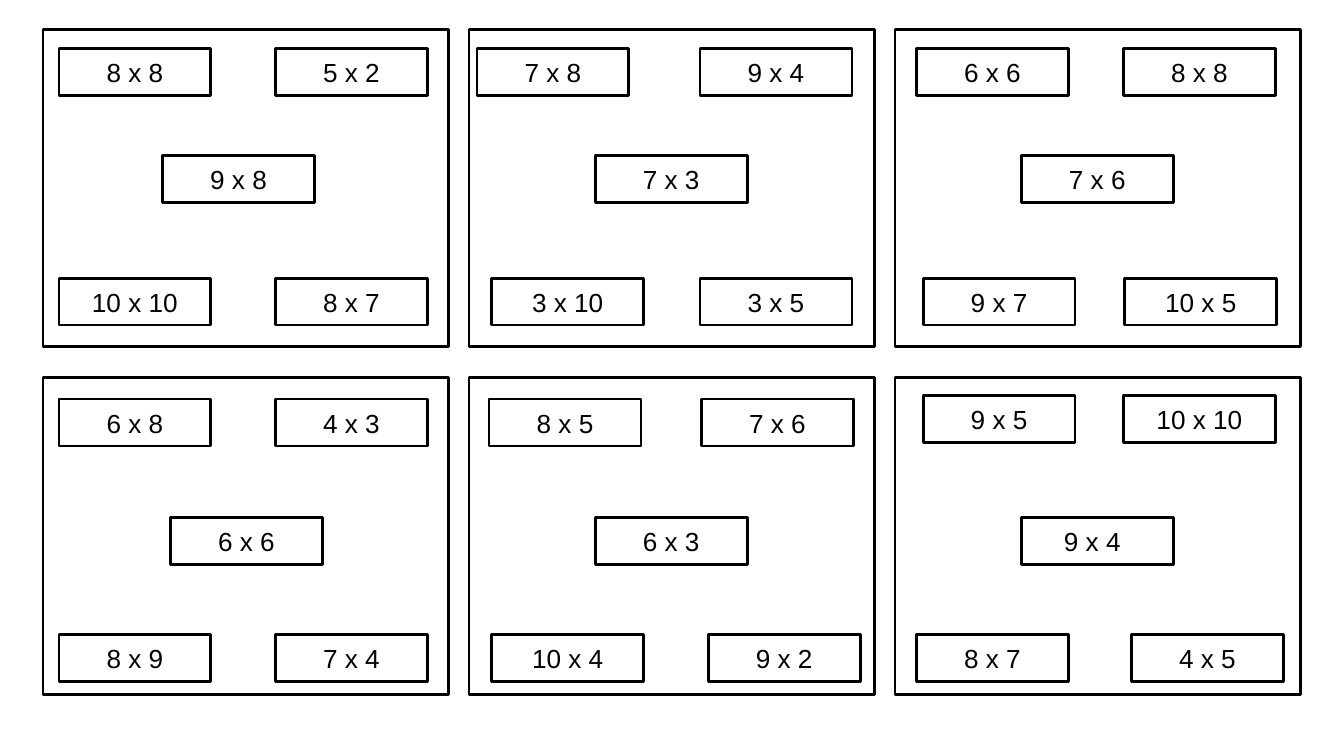
from pptx import Presentation
from pptx.dml.color import RGBColor
from pptx.enum.shapes import MSO_SHAPE
from pptx.enum.text import MSO_ANCHOR, PP_ALIGN
from pptx.util import Pt

BLACK = RGBColor(0, 0, 0)
WHITE = RGBColor(255, 255, 255)

# Cards by row: five (product, left offset in the card), in the order
# top left, top right, middle, bottom left, bottom right
CARDS = [
    [
        [("8 x 8", 8.6), ("5 x 2", 124.6), ("9 x 8", 64.1), ("10 x 10", 8.6), ("8 x 7", 124.6)],
        [("7 x 8", 4.3), ("9 x 4", 123.8), ("7 x 3", 67.7), ("3 x 10", 12.2), ("3 x 5", 123.8)],
        [("6 x 6", 11.5), ("8 x 8", 122.4), ("7 x 6", 67.7), ("9 x 7", 15.1), ("10 x 5", 123.1)],
    ],
    [
        [("6 x 8", 8.6), ("4 x 3", 124.6), ("6 x 6", 68.4), ("8 x 9", 8.6), ("7 x 4", 124.6)],
        [("8 x 5", 10.8), ("7 x 6", 124.6), ("6 x 3", 67.7), ("10 x 4", 12.2), ("9 x 2", 128.2)],
        [("9 x 5", 15.1), ("10 x 10", 122.4), ("9 x 4", 67.7), ("8 x 7", 11.5), ("4 x 5", 126.7)],
    ],
]
# Top offsets of the top, middle and bottom boxes, by card row
BOX_TOPS = [(10.1, 67.7, 133.2), (11.5, 74.9, 137.5)]
BOX_LEVELS = (0, 0, 1, 2, 2)
LAST_CARD = (1, 2)
LAST_CARD_TOP = 9.4      # its top boxes sit a little higher
LAST_CARD_INDENT = 22.8  # its middle box is left-aligned

CARD_LEFT, CARD_TOP = 23, 15.8
CARD_W, CARD_H = 217.4, 169.9
STEP_X, STEP_Y = 228.24, 186.5
BOX_W, BOX_H = 81.4, 25.2
INSET = 7.2

prs = Presentation()
prs.slide_width, prs.slide_height = Pt(720), Pt(405)
s = prs.slides.add_slide(prs.slide_layouts[6])


def add_rect(x, y, w, h):
    sp = s.shapes.add_shape(MSO_SHAPE.RECTANGLE, Pt(x), Pt(y), Pt(w), Pt(h))
    sp.shadow.inherit = False
    sp.fill.solid()
    sp.fill.fore_color.rgb = WHITE
    sp.line.color.rgb = BLACK
    sp.line.width = Pt(1.5)
    return sp


def add_product(text, x, y, indent=None):
    tf = add_rect(x, y, BOX_W, BOX_H).text_frame
    tf.word_wrap = True
    tf.vertical_anchor = MSO_ANCHOR.MIDDLE
    tf.margin_top = tf.margin_bottom = tf.margin_right = Pt(INSET)
    tf.margin_left = Pt(indent or INSET)
    p = tf.paragraphs[0]
    p.alignment = PP_ALIGN.LEFT if indent else PP_ALIGN.CENTER
    r = p.add_run()
    r.text = text
    r.font.name = "Arial"
    r.font.size = Pt(14)
    r.font.color.rgb = BLACK


# Cards with their five boxes
for row, cards in enumerate(CARDS):
    for col, products in enumerate(cards):
        left, top = CARD_LEFT + col * STEP_X, CARD_TOP + row * STEP_Y
        add_rect(left, top, CARD_W, CARD_H)
        is_last = (row, col) == LAST_CARD
        for level, (text, dx) in zip(BOX_LEVELS, products):
            dy = LAST_CARD_TOP if is_last and level == 0 else BOX_TOPS[row][level]
            indent = LAST_CARD_INDENT if is_last and level == 1 else None
            add_product(text, left + dx, top + dy, indent)

prs.save("out.pptx")
